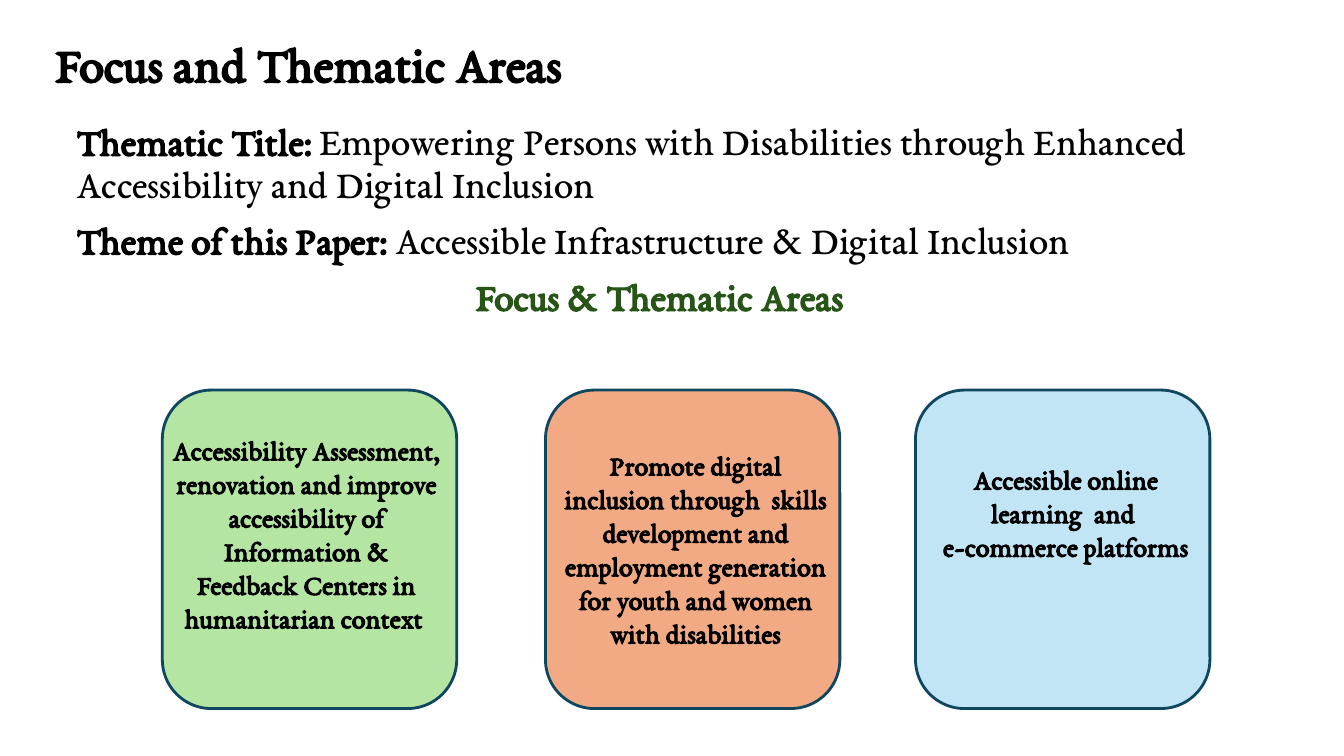
import pptx
import pptx.util
import pptx.dml.color
import pptx.enum.shapes
import pptx.enum.text

Inches = pptx.util.Inches
ALIGN = pptx.enum.text.PP_ALIGN
ANCHOR = pptx.enum.text.MSO_ANCHOR

FONT = "EB Garamond"
BLACK, GREEN, OUTLINE = "000000", "275417", "104760"
CARD_TOP, CARD_WIDTH, CARD_HEIGHT = 3.87, 2.92, 3.16
LABEL_WIDTH = 2.86

# Card left, fill, label offset from the card's corner, label height, paragraphs
CARDS = [
    (1.61, "B4E5A2", (0, 0.37), 2.79,
     ["Accessibility Assessment, renovation and improve accessibility of "
      "Information & Feedback Centers in humanitarian context "]),
    (5.41, "F2AA84", (0.06, 0.52), 2.79,
     ["Promote digital inclusion through  skills development and employment "
      "generation for youth and women with disabilities"]),
    (9.08, "C1E5F5", (0.06, 0.66), 1.11,
     ["Accessible online learning  and ", "e-commerce platforms"]),
]


def rgb(value):
    return pptx.dml.color.RGBColor.from_string(value)


def add_text(slide, box, paragraphs, size=20, color=BLACK, align=ALIGN.LEFT,
             anchor=ANCHOR.TOP, spacing=1.0, gap=0):
    """Each paragraph is a list of (text, bold) runs."""
    frame = slide.shapes.add_textbox(*map(Inches, box)).text_frame
    frame.word_wrap = True
    frame.vertical_anchor = anchor
    for index, runs in enumerate(paragraphs):
        paragraph = frame.add_paragraph() if index else frame.paragraphs[0]
        paragraph.alignment = align
        paragraph.line_spacing = spacing
        paragraph.space_before = pptx.util.Pt(gap if index else 0)
        for text, bold in runs:
            run = paragraph.add_run()
            run.text = text
            run.font.name = FONT
            run.font.size = pptx.util.Pt(size)
            run.font.bold = bold
            run.font.color.rgb = rgb(color)
    return frame


def add_title(slide, box):
    add_text(slide, box, [[("Focus and Thematic Areas", True)]], size=36,
             anchor=ANCHOR.MIDDLE, spacing=0.9)


def add_themes(slide, box):
    themes = add_text(slide, box, [
        [("Thematic Title: ", True),
         ("Empowering Persons with Disabilities through Enhanced "
          "Accessibility and Digital Inclusion", False)],
        [("Theme of this Paper: ", True),
         ("Accessible Infrastructure & Digital Inclusion", False)],
        [("Focus & Thematic Areas", True)],
    ], size=28, spacing=0.9, gap=10)
    # Centred green heading above the cards
    heading = themes.paragraphs[-1]
    heading.alignment = ALIGN.CENTER
    heading.runs[0].font.color.rgb = rgb(GREEN)


def add_card(slide, box, fill, label_offset, label_height, lines):
    card = slide.shapes.add_shape(
        pptx.enum.shapes.MSO_SHAPE.ROUNDED_RECTANGLE, *map(Inches, box))
    card.shadow.inherit = False
    card.fill.solid()
    card.fill.fore_color.rgb = rgb(fill)
    card.line.color.rgb = rgb(OUTLINE)
    card.line.width = pptx.util.Pt(2)
    label_box = (box[0] + label_offset[0], box[1] + label_offset[1],
                 LABEL_WIDTH, label_height)
    add_text(slide, label_box, [[(line, True)] for line in lines],
             align=ALIGN.CENTER)


def main():
    deck = pptx.Presentation()
    deck.slide_width, deck.slide_height = Inches(13.33), Inches(7.5)
    slide = deck.slides.add_slide(deck.slide_layouts[6])

    add_title(slide, (0.45, 0.31, 11.96, 0.69))
    add_themes(slide, (0.66, 1.16, 11.76, 2.25))
    for left, *content in CARDS:
        add_card(slide, (left, CARD_TOP, CARD_WIDTH, CARD_HEIGHT), *content)

    deck.save("out.pptx")


if __name__ == "__main__":
    main()
